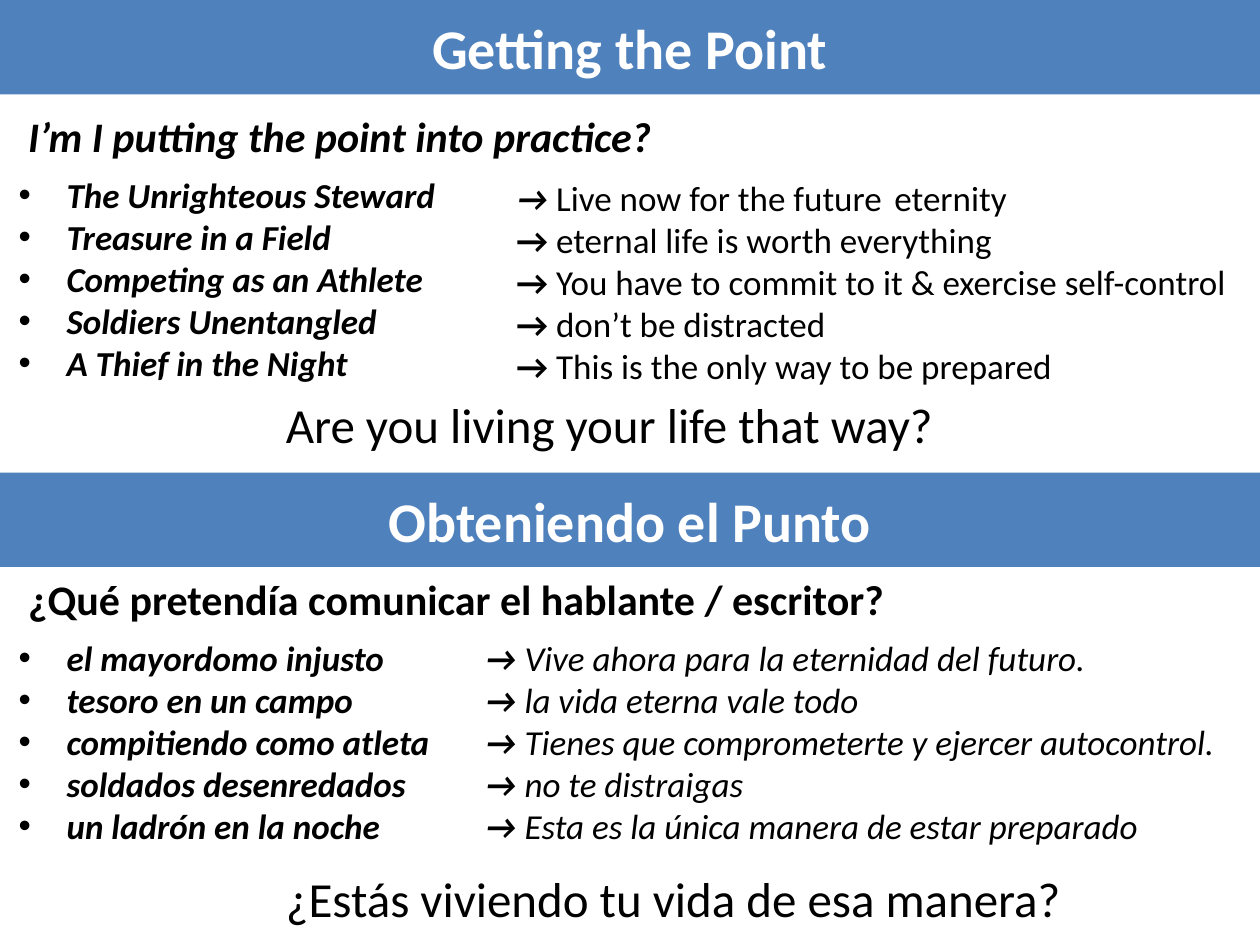
from lxml.etree import SubElement
from pptx import Presentation
from pptx.dml.color import RGBColor
from pptx.enum.shapes import MSO_SHAPE as Shape
from pptx.enum.text import MSO_ANCHOR as Anchor, MSO_AUTO_SIZE as AutoSize, PP_ALIGN as Align
from pptx.oxml.ns import qn
from pptx.util import Inches, Pt

presentation = Presentation()
presentation.slide_width = Inches(10)
presentation.slide_height = Inches(7.5)
slide = presentation.slides.add_slide(presentation.slide_layouts[6])

COLUMN = presentation.slide_width / 40
ROW = presentation.slide_height / 30
HALF = 15
BAND = 3
INDENT = Inches(0.38)
BOLD = {"bold": True}
ITALIC = {"italic": True}
BOLD_ITALIC = BOLD | ITALIC


def write(paragraph, text, size, color="000000", **font_values):
    run = paragraph.add_run()
    run.text = text
    run.font.color.rgb = RGBColor.from_string(color)
    values = {"name": "Calibri", "size": Pt(size), "bold": False, "italic": False}
    for name, value in (values | font_values).items():
        setattr(run.font, name, value)


def add_lines(left, top, width, height, lines, size, wrap=True, bullet=False):
    box = [round(left * COLUMN), round(top * ROW), round(width * COLUMN), round(height * ROW)]
    frame = slide.shapes.add_textbox(*box).text_frame
    frame.word_wrap = wrap
    frame.auto_size = AutoSize.SHAPE_TO_FIT_TEXT
    for index, runs in enumerate(lines):
        paragraph = frame.add_paragraph() if index else frame.paragraphs[0]
        if bullet:
            properties = paragraph._p.get_or_add_pPr()
            properties.set("marL", str(INDENT))
            properties.set("indent", str(-INDENT))
            SubElement(properties, qn("a:buFont"), typeface="Arial")
            SubElement(properties, qn("a:buChar"), char="•")
        for text, font_values in runs:
            write(paragraph, text, size, **font_values)


sections = [
    {
        "title": "Getting the Point",
        "heading": ("I’m I putting the point into practice?", BOLD_ITALIC),
        "heading_top": 3.32,
        "list_top": 5.32,
        "meaning_box": (16, 5.4, 23.68),
        "first_arrow": BOLD_ITALIC,
        "arrow": BOLD,
        "meaning": {},
        "pairs": [
            ("The Unrighteous Steward", "Live now for the future\teternity"),
            ("Treasure in a Field", "eternal life is worth everything"),
            ("Competing as an Athlete", "You have to commit to it & exercise self-control"),
            ("Soldiers Unentangled", "don’t be distracted"),
            ("A Thief in the Night", "This is the only way to be prepared"),
        ],
        "question": "Are you living your life that way?",
        "question_top": 12.32,
        "question_width": 22.32,
    },
    {
        "title": "Obteniendo el Punto",
        "heading": ("¿Qué pretendía comunicar el hablante / escritor?", BOLD),
        "heading_top": 3,
        "list_top": 5,
        "meaning_box": (15, 5, 24.68),
        "first_arrow": BOLD_ITALIC,
        "arrow": BOLD_ITALIC,
        "meaning": ITALIC,
        "pairs": [
            ("el mayordomo injusto", "Vive ahora para la eternidad del futuro."),
            ("tesoro en un campo", "la vida eterna vale todo"),
            ("compitiendo como atleta", "Tienes que comprometerte y ejercer autocontrol."),
            ("soldados desenredados", "no te distraigas"),
            ("un ladrón en la noche", "Esta es la única manera de estar preparado"),
        ],
        "question": "¿Estás viviendo tu vida de esa manera?",
        "question_top": 12.36,
        "question_width": 25.68,
    },
]

for number, section in enumerate(sections):
    start = number * HALF
    band = slide.shapes.add_shape(
        Shape.RECTANGLE, 0, round(start * ROW), presentation.slide_width, round(BAND * ROW)
    )
    band.shadow.inherit = False
    band.fill.solid()
    band.fill.fore_color.rgb = RGBColor.from_string("4F81BD")
    band.line.fill.background()
    band.text_frame.vertical_anchor = Anchor.MIDDLE
    title = band.text_frame.paragraphs[0]
    title.alignment = Align.CENTER
    write(title, section["title"], 32, "FFFFFF", bold=True)

    add_lines(0.5, start + section["heading_top"], 39, 2, [[section["heading"]]], 24)

    parables = [[(parable, BOLD_ITALIC)] for parable, _ in section["pairs"]]
    add_lines(0.2, start + section["list_top"], 17.12, 7.12, parables, 20, bullet=True)

    meanings = []
    for index, (_, meaning) in enumerate(section["pairs"]):
        arrow = section["arrow"] if index else section["first_arrow"]
        meanings.append([("→ ", arrow), (meaning, section["meaning"])])
    left, top, width = section["meaning_box"]
    add_lines(left, start + top, width, 7.12, meanings, 20)

    question = [[(section["question"], {})]]
    top, width = start + section["question_top"], section["question_width"]
    add_lines(8.68, top, width, 2.28, question, 28, wrap=False)

presentation.save("out.pptx")
